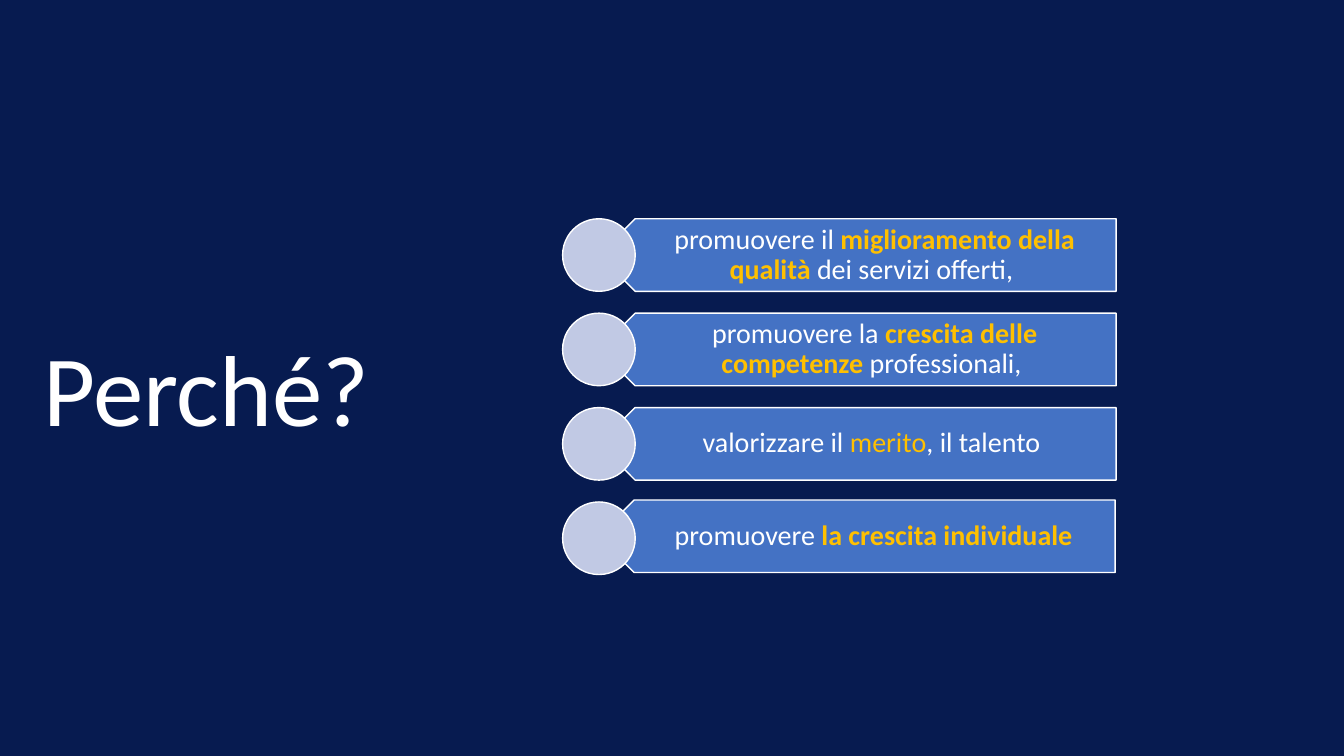
from dataclasses import dataclass

from pptx import Presentation
from pptx.dml.color import RGBColor
from pptx.enum.shapes import MSO_SHAPE
from pptx.enum.text import MSO_ANCHOR, MSO_AUTO_SIZE, PP_ALIGN
from pptx.util import Inches, Pt

OVAL = MSO_SHAPE.OVAL
MIDDLE = MSO_ANCHOR.MIDDLE
GROW = MSO_AUTO_SIZE.SHAPE_TO_FIT_TEXT
CENTER = PP_ALIGN.CENTER


@dataclass(frozen=True)
class Theme:
    """Colours, font and type sizes of the slide."""
    background: RGBColor = RGBColor.from_string("071B50")
    plate: RGBColor = RGBColor.from_string("4472C4")
    disc: RGBColor = RGBColor.from_string("C1C9E4")
    text: RGBColor = RGBColor.from_string("FFFFFF")
    accent: RGBColor = RGBColor.from_string("FFC000")
    font: str = "Calibri"
    title_size: Pt = Pt(72)
    reason_size: Pt = Pt(20)
    outline: Pt = Pt(1)


class ReasonsSlide:
    """Draws the question and its reasons in one style."""

    def __init__(self, slide, theme):
        self.slide, self.theme = slide, theme
        fill = slide.background.fill
        fill.solid()
        fill.fore_color.rgb = theme.background

    def style_run(self, run, size, color, bold=False):
        font = run.font
        font.name, font.size, font.bold = self.theme.font, size, bold
        font.color.rgb = color

    def paint(self, shape, color):
        shape.shadow.inherit = False
        shape.fill.solid()
        shape.fill.fore_color.rgb = color
        shape.line.color.rgb = self.theme.text
        shape.line.width = self.theme.outline

    def question(self, text, left, top, width, height):
        box = self.slide.shapes.add_textbox(
            Inches(left), Inches(top), Inches(width), Inches(height))
        frame = box.text_frame
        frame.word_wrap = True
        frame.auto_size = GROW
        frame.text = text
        self.style_run(frame.paragraphs[0].runs[0], self.theme.title_size, self.theme.text)

    def plate(self, phrases, left, top, width, height):
        notch, right, bottom = left + height / 2, left + width, top + height
        outline = [(notch, bottom), (left, top + height / 2), (notch, top), (right, top)]
        builder = self.slide.shapes.build_freeform(Inches(right), Inches(bottom))
        builder.add_line_segments([(Inches(x), Inches(y)) for x, y in outline])
        plate = builder.convert_to_shape()
        self.paint(plate, self.theme.plate)
        frame = plate.text_frame
        frame.word_wrap = True
        frame.vertical_anchor = MIDDLE
        frame.margin_left, frame.margin_right = Inches(0.5), Inches(0.16)
        frame.margin_top = frame.margin_bottom = Inches(0.08)
        paragraph = frame.paragraphs[0]
        paragraph.alignment = CENTER
        paragraph.line_spacing = 0.9
        for text, accented, bold in phrases:
            run = paragraph.add_run()
            run.text = text
            color = self.theme.accent if accented else self.theme.text
            self.style_run(run, self.theme.reason_size, color, bold)

    def disc(self, left, top, size):
        disc = self.slide.shapes.add_shape(
            OVAL, Inches(left), Inches(top), Inches(size), Inches(size))
        self.paint(disc, self.theme.disc)


REASONS = [
    [("promuovere il ", False, False), ("miglioramento della qualità", True, True),
     (" dei servizi offerti, ", False, False)],
    [("promuovere la ", False, False), ("crescita delle competenze", True, True),
     (" professionali, ", False, False)],
    [("valorizzare il ", False, False), ("merito", True, False),
     (", il talento ", False, False)],
    [("promuovere ", False, False), ("la crescita individuale", True, True)],
]
PLATE_SHIFTS = [(0, 0), (0, 0), (0, 0), (-0.01, -0.02)]
DISC_LEFT, DISC_SIZE, PLATE_WIDTH = 5.58, 0.72, 5.13
FIRST_TOP, LAST_TOP = 2.17, 4.98


def main():
    presentation = Presentation()
    presentation.slide_width, presentation.slide_height = Inches(13.33), Inches(7.5)
    slide = presentation.slides.add_slide(presentation.slide_layouts[6])
    page = ReasonsSlide(slide, Theme())
    page.question("Perché?", 0.33, 3.18, 3.6, 1.31)
    pitch = (LAST_TOP - FIRST_TOP) / (len(REASONS) - 1)
    for row, (phrases, (dx, dy)) in enumerate(zip(REASONS, PLATE_SHIFTS)):
        top = FIRST_TOP + row * pitch
        page.plate(phrases, DISC_LEFT + DISC_SIZE / 2 + dx, top + dy, PLATE_WIDTH, DISC_SIZE)
        page.disc(DISC_LEFT, top, DISC_SIZE)
    presentation.save("out.pptx")


if __name__ == "__main__":
    main()
